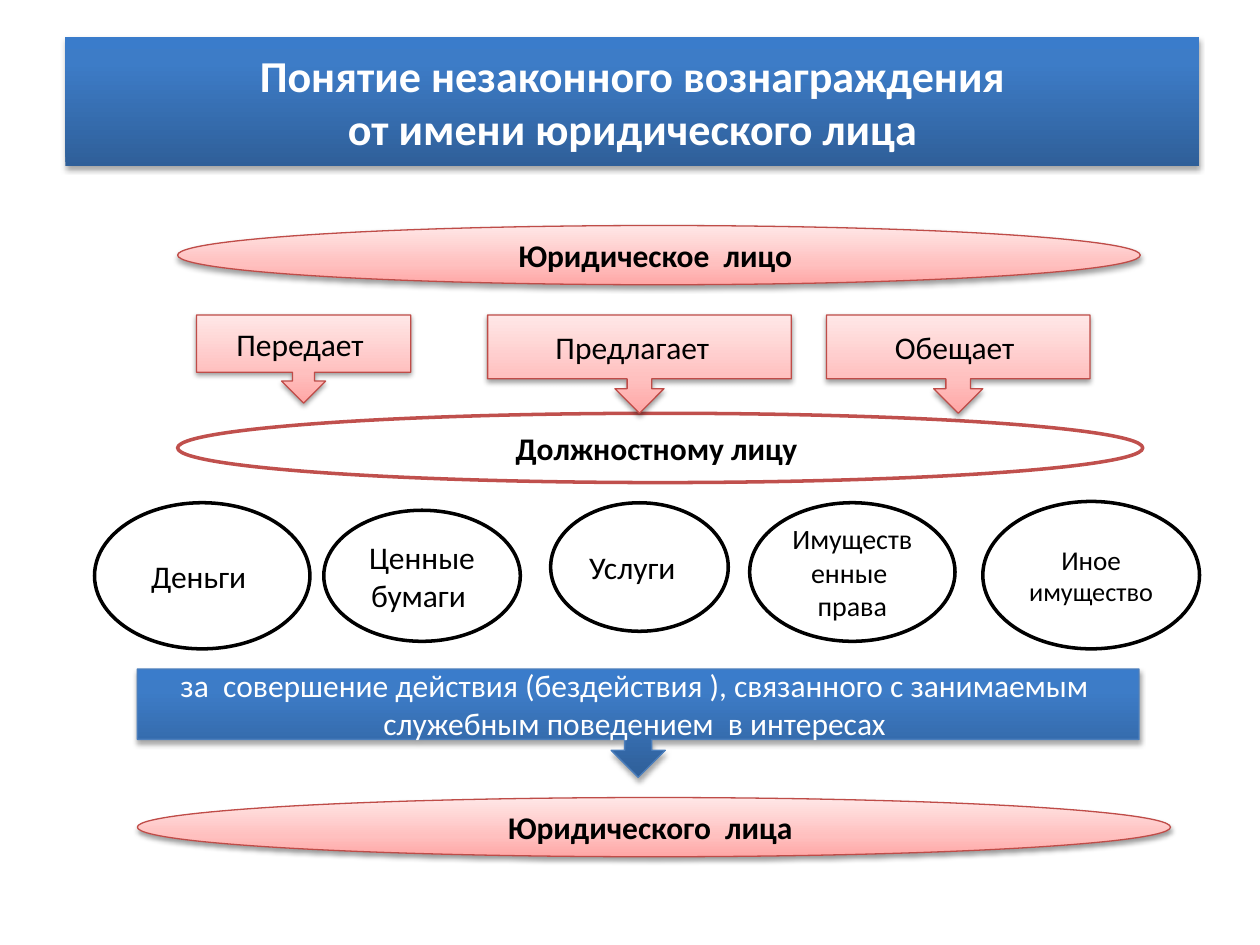
from pptx import Presentation
from pptx import util as u
from pptx.dml.color import RGBColor
from pptx.enum import shapes, text
from pptx.oxml import parse_xml
from pptx.oxml.ns import nsdecls, qn

KIND = shapes.MSO_SHAPE
BLUE = ((0, "2F5F99"), (80, "3D7CC7"), (100, "3A7CCB"))
PINK = ((0, "FFA6A5"), (35, "FFC0BF"), (100, "FFE7E7"))
BLACK, WHITE, RED = "000000", "FFFFFF", "BF4C48"


def paint(color, value):
    """Set a color format from a hex string."""
    color.rgb = RGBColor.from_string(value)


def blend(shape, stops):
    """Fill a shape with a gradient that runs from bottom to top."""
    shape.fill.gradient()
    items = "".join(
        f'<a:gs pos="{pos * 1000}"><a:srgbClr val="{value}"/></a:gs>'
        for pos, value in stops
    )
    props = shape.element.spPr
    props.replace(props.find(qn("a:gradFill")), parse_xml(
        f'<a:gradFill {nsdecls("a")} rotWithShape="1"><a:gsLst>{items}</a:gsLst>'
        '<a:lin ang="16200000" scaled="0"/></a:gradFill>'
    ))


def shade(shape, alpha, gap):
    """Drop a soft shadow straight below a shape."""
    shape.element.spPr.find(qn("a:effectLst")).append(parse_xml(
        f'<a:outerShdw {nsdecls("a")} blurRad="{u.Pt(3.1)}" dist="{u.Pt(gap)}" '
        'dir="5400000" rotWithShape="0"><a:srgbClr val="000000">'
        f'<a:alpha val="{alpha * 1000}"/></a:srgbClr></a:outerShdw>'
    ))


def style(run, size, ink, bold):
    """Set the font of one run."""
    run.font.name = "Calibri"
    run.font.size = u.Pt(size)
    run.font.bold = bold
    paint(run.font.color, ink)


def write(shape, words, size=18, ink=BLACK, bold=False):
    """Put centred text into a shape."""
    frame = shape.text_frame
    frame.word_wrap = True
    frame.vertical_anchor = text.MSO_ANCHOR.MIDDLE
    para = frame.paragraphs[0]
    para.text = words
    para.alignment = text.PP_ALIGN.CENTER
    for run in para.runs:
        style(run, size, ink, bold)
    return para


def draw(slide, kind, box, line=None, width=0.75):
    """Add a white preset shape with an optional outline."""
    shape = slide.shapes.add_shape(kind, *map(u.Inches, box))
    shape.shadow.inherit = False
    shape.fill.solid()
    paint(shape.fill.fore_color, WHITE)
    if line:
        paint(shape.line.color, line)
        shape.line.width = u.Pt(width)
    else:
        shape.line.fill.background()
    return shape


def panel(slide, kind, box, words, line=None, size=18, bold=False):
    """Add a blue panel with white text."""
    shape = draw(slide, kind, box, line)
    blend(shape, BLUE)
    shade(shape, 35, 1.8)
    write(shape, words, size, WHITE, bold)


def rosy(slide, kind, box, words, bold=False):
    """Add a pink shape with black text."""
    shape = draw(slide, kind, box, RED)
    blend(shape, PINK)
    shade(shape, 38, 1.6)
    write(shape, words, bold=bold)


def ring(slide, box, words, size=18, line=BLACK, bold=False):
    """Add a white oval with a thick outline."""
    shape = draw(slide, KIND.OVAL, box, line, 2)
    return write(shape, words, size, bold=bold)


def main():
    """Build the slide and save it."""
    deck = Presentation()
    deck.slide_width, deck.slide_height = u.Inches(10), u.Inches(7.5)
    slide = deck.slides.add_slide(deck.slide_layouts[6])

    panel(slide, KIND.RECTANGLE, (0.52, 0.29, 9, 1.03),
          "Понятие незаконного вознаграждения\vот имени юридического лица",
          size=25.2, bold=True)
    rosy(slide, KIND.OVAL, (1.41, 1.79, 7.64, 0.47), "Юридическое  лицо ", True)
    ring(slide, (1.41, 3.28, 7.66, 0.55), "Должностному лицу ",
         line="C0504D", bold=True)

    for left, wide, high, words in (
        (1.56, 1.7, 0.7, "Передает "),
        (3.87, 2.41, 0.78, "Предлагает  "),
        (6.56, 2.09, 0.78, "Обещает "),
    ):
        rosy(slide, KIND.DOWN_ARROW_CALLOUT, (left, 2.5, wide, high), words)

    for box, words, size in (
        ((0.75, 3.99, 1.71, 1.16), "Деньги ", 18),
        ((2.57, 4.05, 1.56, 1.04), "Ценные бумаги ", 18),
        ((4.37, 3.99, 1.41, 1.02), "Услуги  ", 18),
        ((5.95, 3.99, 1.63, 1.1), "Имущественные  права", 16),
    ):
        ring(slide, box, words, size)
    other = ring(slide, (7.8, 3.98, 1.72, 1.17), "Иное ", 15.5)
    run = other.add_run()
    run.text = "имущество "
    style(run, 15, BLACK, False)

    panel(slide, KIND.DOWN_ARROW_CALLOUT, (1.09, 5.31, 7.95, 0.86),
          "за  совершение действия (бездействия ), связанного с занимаемым  "
          "служебным поведением  в интересах ", "4B7EBC")
    rosy(slide, KIND.OVAL, (1.09, 6.33, 8.2, 0.47), "Юридического  лица ", True)
    deck.save("out.pptx")


if __name__ == "__main__":
    main()
